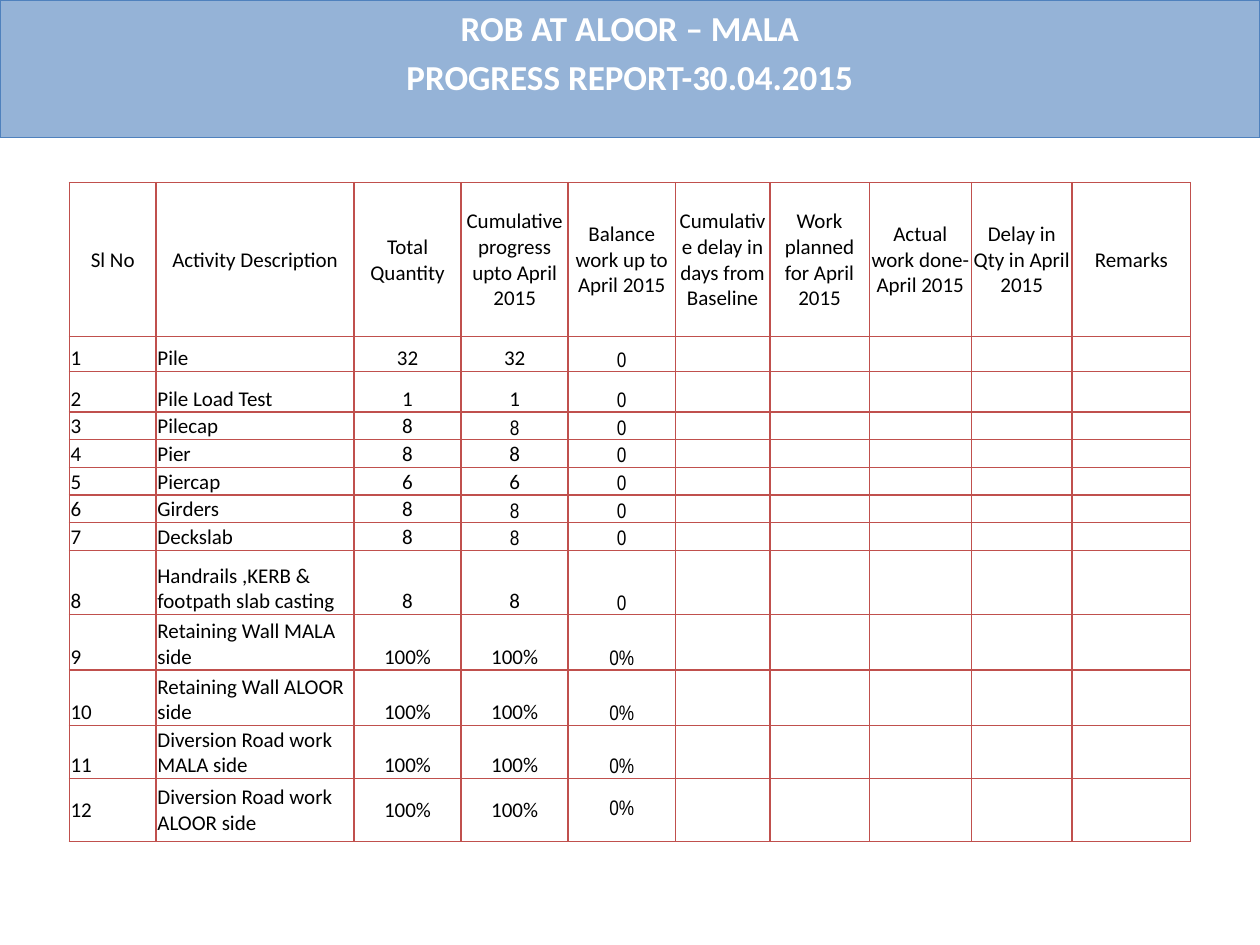
from lxml import etree
from pptx import Presentation
from pptx import util as u
from pptx.dml.color import RGBColor
from pptx.enum import text
from pptx.oxml import ns

COLORS = {"banner": "95B3D7", "banner_line": "4F81BD", "title": "FFFFFF",
          "text": "000000", "border": "C0504D"}
FONT, NARROW = "Calibri", "Arial Narrow"
TITLE = "ROB AT ALOOR – MALA\nPROGRESS REPORT-30.04.2015"
HEADERS = ["Sl No", "Activity Description", "Total Quantity",
           "Cumulative progress upto April 2015",
           "Balance work up to April 2015",
           "Cumulative delay in days from Baseline",
           "Work planned for April 2015", "Actual work done- April 2015",
           "Delay in Qty in April 2015", "Remarks"]
ACTIVITIES = [("Pile", "32"), ("Pile Load Test", "1"), ("Pilecap", "8"),
              ("Pier", "8"), ("Piercap", "6"), ("Girders", "8"),
              ("Deckslab", "8"),
              ("Handrails ,KERB & footpath slab casting", "8"),
              ("Retaining Wall MALA side", "100%"),
              ("Retaining Wall ALOOR side", "100%"),
              ("Diversion Road work MALA side", "100%"),
              ("Diversion Road work ALOOR side", "100%")]
WIDTHS = [0.69, 1.57, 0.85, 0.85, 0.85, 0.75, 0.79, 0.81, 0.8, 0.94]
HEIGHTS = [1.22, 0.28, 0.32] + [0.22] * 5 + [0.51, 0.44, 0.44, 0.42, 0.5]
BALANCE_COLUMN, PROGRESS_COLUMN = 4, 3
NARROW_PROGRESS_ROWS = (3, 6, 7)


def color(name):
    return RGBColor.from_string(COLORS[name])


class ReportSlide:
    def __init__(self, deck):
        self.slide = deck.slides.add_slide(deck.slide_layouts[5])

    def style(self, para, size, name, font=FONT, bold=False):
        for span in para.runs:
            span.font.size = u.Pt(size)
            span.font.name = font
            span.font.bold = bold
            span.font.color.rgb = color(name)

    def banner(self, content, left, top, width, height):
        box = self.slide.shapes.title
        box.left, box.top = u.Inches(left), u.Inches(top)
        box.width, box.height = u.Inches(width), u.Inches(height)
        box.fill.solid()
        box.fill.fore_color.rgb = color("banner")
        box.line.color.rgb = color("banner_line")
        box.line.width = u.Pt(0.75)
        frame = box.text_frame
        frame.text = content
        frame.vertical_anchor = text.MSO_ANCHOR.TOP
        frame.auto_size = text.MSO_AUTO_SIZE.NONE
        for para in frame.paragraphs:
            para.alignment = text.PP_ALIGN.CENTER
            para.space_before = u.Pt(4)
            self.style(para, 20, "title", bold=True)

    def borders(self, cell):
        properties = cell._tc.get_or_add_tcPr()
        for side in ("a:lnL", "a:lnR", "a:lnT", "a:lnB"):
            line = etree.SubElement(properties, ns.qn(side), w=str(u.Pt(1)))
            fill = etree.SubElement(line, ns.qn("a:solidFill"))
            etree.SubElement(fill, ns.qn("a:srgbClr"), val=COLORS["border"])

    def cell(self, cell, content, anchor, align, font):
        self.borders(cell)
        cell.fill.background()
        cell.margin_left = cell.margin_right = cell.margin_top = u.Inches(0.01)
        cell.margin_bottom = 0
        cell.vertical_anchor = anchor
        cell.text_frame.text = content
        para = cell.text_frame.paragraphs[0]
        para.alignment = align
        self.style(para, 12, "text", font)
        if not content:
            etree.SubElement(para._p, ns.qn("a:endParaRPr"), sz="1200")

    def table(self, rows, left, top):
        frame = self.slide.shapes.add_table(
            len(rows), len(WIDTHS), u.Inches(left), u.Inches(top),
            u.Inches(sum(WIDTHS)), u.Inches(sum(HEIGHTS)))
        table = frame.table
        table.first_row = table.horz_banding = False
        for column, width in zip(table.columns, WIDTHS):
            column.width = u.Inches(width)
        for row, height in zip(table.rows, HEIGHTS):
            row.height = u.Inches(height)
        for r, values in enumerate(rows):
            middle = r in (0, len(rows) - 1)
            anchor = text.MSO_ANCHOR.MIDDLE if middle else text.MSO_ANCHOR.BOTTOM
            for c, value in enumerate(values):
                centred = r == 0 or c > 1
                align = text.PP_ALIGN.CENTER if centred else text.PP_ALIGN.LEFT
                narrow = (c == BALANCE_COLUMN and r > 0) or (
                    c == PROGRESS_COLUMN and r in NARROW_PROGRESS_ROWS)
                self.cell(table.cell(r, c), value, anchor, align,
                          NARROW if narrow else FONT)


def main():
    deck = Presentation()
    deck.slide_width, deck.slide_height = u.Inches(10), u.Inches(7.5)
    report = ReportSlide(deck)
    report.banner(TITLE, 0, 0, 10, 1.09)
    rows = [HEADERS]
    for number, (activity, quantity) in enumerate(ACTIVITIES, 1):
        balance = "0%" if quantity.endswith("%") else "0"
        rows.append([str(number), activity, quantity, quantity, balance]
                    + [""] * 5)
    report.table(rows, 0.55, 1.45)
    deck.save("out.pptx")


if __name__ == "__main__":
    main()
